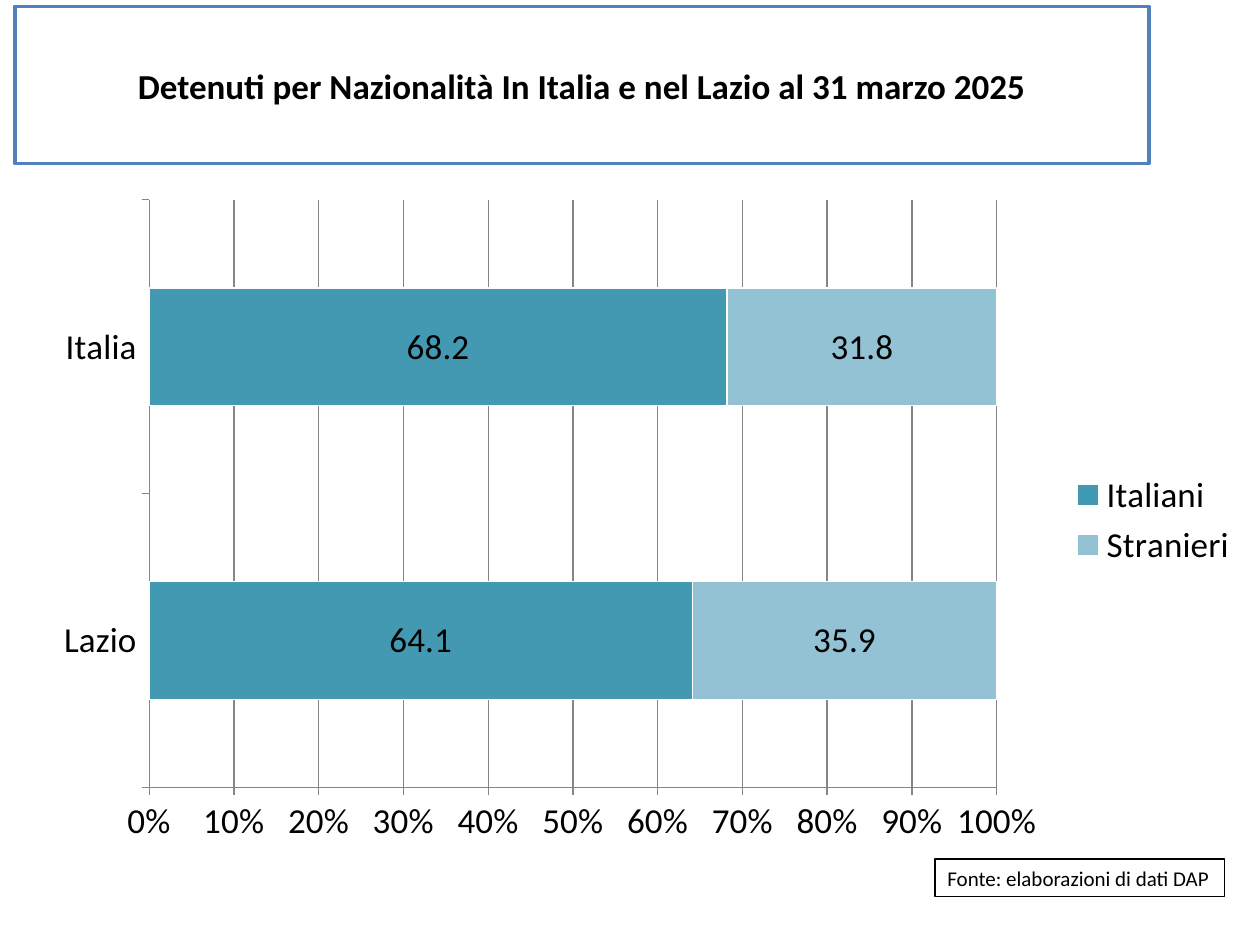
from lxml.etree import SubElement
from pptx import Presentation
from pptx.chart.data import CategoryChartData
from pptx.dml.color import RGBColor
from pptx.enum.chart import XL_CHART_TYPE, XL_LABEL_POSITION, XL_LEGEND_POSITION, XL_TICK_MARK
from pptx.enum.text import MSO_ANCHOR, PP_ALIGN
from pptx.oxml.ns import qn
from pptx.util import Cm, Pt

FONT = "Calibri"
TITLE = "Detenuti per Nazionalità In Italia e nel Lazio al 31 marzo 2025"
SOURCE = "Fonte: elaborazioni di dati DAP"
AREAS = ["Lazio", "Italia"]
SERIES = [
    ("Italiani", [64.1, 68.2], "4399B1"),
    ("Stranieri", [35.9, 31.8], "93C2D4"),
]
PLOT = {"x": 0.09, "y": 0.02, "w": 0.7, "h": 0.88}  # shares of the chart frame


def paint(color, code):
    color.rgb = RGBColor.from_string(code)


def style(font, size, bold=False):
    font.name, font.size, font.bold = FONT, Pt(size), bold
    paint(font.color, "000000")


def rule(line, code, width):
    paint(line.color, code)
    line.width = Pt(width)


def add_box(slide, place, text, size, edge, width, align, bold=False, wrap=True):
    box = slide.shapes.add_textbox(*map(Cm, place))
    box.fill.solid()
    paint(box.fill.fore_color, "FFFFFF")
    rule(box.line, edge, width)
    frame = box.text_frame
    frame.word_wrap = wrap
    frame.vertical_anchor = MSO_ANCHOR.MIDDLE
    para = frame.paragraphs[0]
    para.text = text
    para.alignment = align
    style(para.font, size, bold)


def fix_plot(chart):
    """Pin the inner plot area to the shares in PLOT."""
    area = chart._chartSpace.chart.plotArea
    layout = area.find(qn("c:layout"))
    if layout is None:
        layout = SubElement(area, qn("c:layout"))
        area.insert(0, layout)
    manual = SubElement(layout, qn("c:manualLayout"))
    parts = [("layoutTarget", "inner"), ("xMode", "edge"), ("yMode", "edge"), *PLOT.items()]
    for tag, val in parts:
        SubElement(manual, qn("c:" + tag)).set("val", str(val))


def add_bars(slide, place):
    data = CategoryChartData()
    data.categories = AREAS
    for name, vals, _ in SERIES:
        data.add_series(name, vals)
    kind = XL_CHART_TYPE.BAR_STACKED_100
    chart = slide.shapes.add_chart(kind, *map(Cm, place), data).chart
    style(chart.font, 20)
    chart.has_title = False
    chart.has_legend = True
    chart.legend.position = XL_LEGEND_POSITION.RIGHT
    chart.legend.include_in_layout = False

    plot = chart.plots[0]
    plot.gap_width, plot.overlap = 150, 100
    plot.vary_by_categories = False
    for bars, (_, _, code) in zip(plot.series, SERIES):
        bars.format.fill.solid()
        paint(bars.format.fill.fore_color, code)
        rule(bars.format.line, "FFFFFF", 0.75)
        labels = bars.data_labels
        labels.show_value = True
        labels.position = XL_LABEL_POSITION.CENTER
        labels.number_format, labels.number_format_is_linked = "0.0", False
        style(labels.font, 20)

    for axis in (chart.category_axis, chart.value_axis):
        axis.major_tick_mark = XL_TICK_MARK.OUTSIDE
        axis.minor_tick_mark = XL_TICK_MARK.NONE
        rule(axis.format.line, "868686", 0.75)
    scale = chart.value_axis
    scale.minimum_scale, scale.maximum_scale, scale.major_unit = 0, 1, 0.1
    scale.has_major_gridlines = True
    rule(scale.major_gridlines.format.line, "868686", 0.75)
    scale.tick_labels.number_format = "0%"
    scale.tick_labels.number_format_is_linked = False
    fix_plot(chart)


def main():
    deck = Presentation()
    deck.slide_width, deck.slide_height = Cm(25.4), Cm(19.05)
    slide = deck.slides.add_slide(deck.slide_layouts[6])
    add_box(slide, (0.3, 0.13, 22.86, 3.17), TITLE, 20, "4F81BD", 2, PP_ALIGN.CENTER, bold=True)
    add_box(slide, (18.85, 17.32, 5.84, 0.76), SOURCE, 12, "000000", 0.75, PP_ALIGN.LEFT, wrap=False)
    add_bars(slide, (0.81, 3.76, 24.41, 13.46))
    deck.save("out.pptx")


if __name__ == "__main__":
    main()
